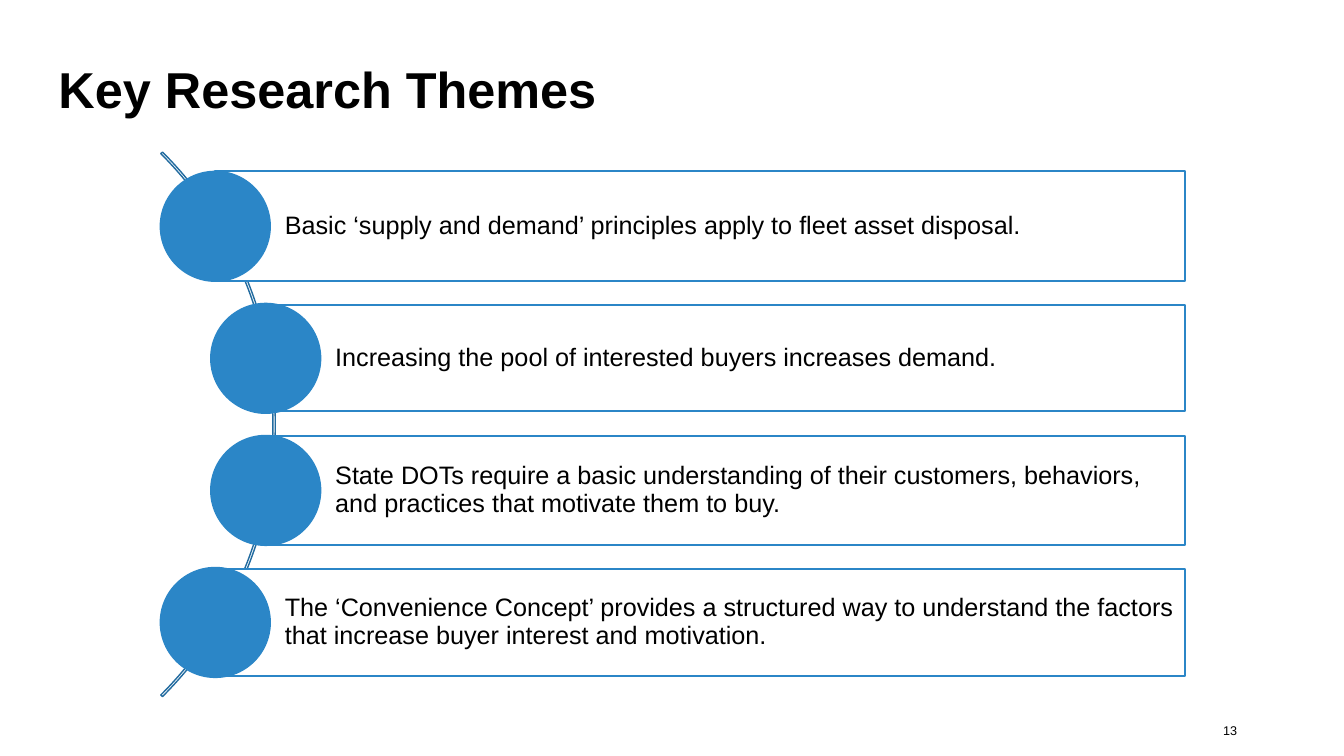
from pptx import Presentation
from pptx.dml.color import RGBColor
from pptx.enum.shapes import MSO_SHAPE as Shape
from pptx.enum.text import MSO_ANCHOR as Anchor, MSO_AUTO_SIZE as AutoSize, PP_ALIGN as Align
from pptx.util import Inches, Pt

BLUE, DARK_BLUE, WHITE, BLACK = "2B86C7", "226B9F", "FFFFFF", "000000"
WIDTH, HEIGHT = 13.33, 7.5
DIAMETER = 1.09
PITCH = 1.31
INDENT = 0.5

# Text, indent level, height of the text box
THEMES = [
    ("Basic ‘supply and demand’ principles apply to fleet asset disposal.", 0, 1.09),
    ("Increasing the pool of interested buyers increases demand.", 1, 1.05),
    ("State DOTs require a basic understanding of their customers, behaviors, "
     "and practices that motivate them to buy.", 1, 1.08),
    ("The ‘Convenience Concept’ provides a structured way to understand the factors "
     "that increase buyer interest and motivation.", 0, 1.06),
]


def color(hex_string):
    return RGBColor.from_string(hex_string)


def write(shape, text, size, anchor, margins=(0, 0, 0, 0), bold=False):
    frame = shape.text_frame
    frame.text = text
    frame.word_wrap = True
    frame.auto_size = AutoSize.NONE
    frame.vertical_anchor = anchor
    (frame.margin_left, frame.margin_top,
     frame.margin_right, frame.margin_bottom) = map(Inches, margins)
    para = frame.paragraphs[0]
    para.alignment = Align.LEFT
    font = para.font
    font.name, font.size, font.bold = "Arial", Pt(size), bold
    font.color.rgb = color(BLACK)
    return para


def add_preset(page, preset, box, line, weight, fill=None):
    shape = page.shapes.add_shape(preset, *map(Inches, box))
    shape.shadow.inherit = False
    shape.line.color.rgb = color(line)
    shape.line.width = Pt(weight)
    if fill:
        shape.fill.solid()
        shape.fill.fore_color.rgb = color(fill)
    else:
        shape.fill.background()
    return shape


def add_title(page, box):
    title = page.shapes.title
    title.left, title.top, title.width, title.height = map(Inches, box)
    write(title, "Key Research Themes", 36, Anchor.TOP, bold=True).line_spacing = 1.0


def add_page_number(page, box):
    write(page.shapes.add_textbox(*map(Inches, box)), "13", 9, Anchor.TOP)


def add_arc(page, right, middle, diameter):
    """Draw the curve from 315° to 45° that links the circles."""
    box = (right - diameter, middle - diameter / 2, diameter, diameter)
    arc = add_preset(page, Shape.BLOCK_ARC, box, DARK_BLUE, 1)
    for index, value in enumerate((189, 27, 0.003)):
        arc.adjustments[index] = value


def add_theme(page, text, height, left, top, right):
    """Place a circle at left, top and a text box that starts at its centre."""
    radius = DIAMETER / 2
    start, middle = left + radius, top + radius
    box = (start, middle - height / 2, right - start, height)
    panel = add_preset(page, Shape.RECTANGLE, box, BLUE, 1.5, WHITE)
    para = write(panel, text, 18, Anchor.MIDDLE, (0.69, 0.05, 0.05, 0.05))
    para.line_spacing = 0.9
    add_preset(page, Shape.OVAL, (left, top, DIAMETER, DIAMETER), BLUE, 1, BLUE)


def add_themes(page, left, top, width):
    middle = top + (PITCH * (len(THEMES) - 1) + DIAMETER) / 2
    add_arc(page, left + 1.14, middle, 7.64)
    for row, (text, level, height) in enumerate(THEMES):
        add_theme(page, text, height, left + level * INDENT, top + row * PITCH, left + width)


def main():
    deck = Presentation()
    deck.slide_width, deck.slide_height = Inches(WIDTH), Inches(HEIGHT)
    page = deck.slides.add_slide(deck.slide_layouts.get_by_name("Title Only"))
    add_title(page, (0.58, 0.58, 12.18, 0.5))
    add_themes(page, 1.59, 1.7, 10.16)
    add_page_number(page, (12.13, 7.17, 0.62, 0.14))
    deck.save("out.pptx")


if __name__ == "__main__":
    main()
